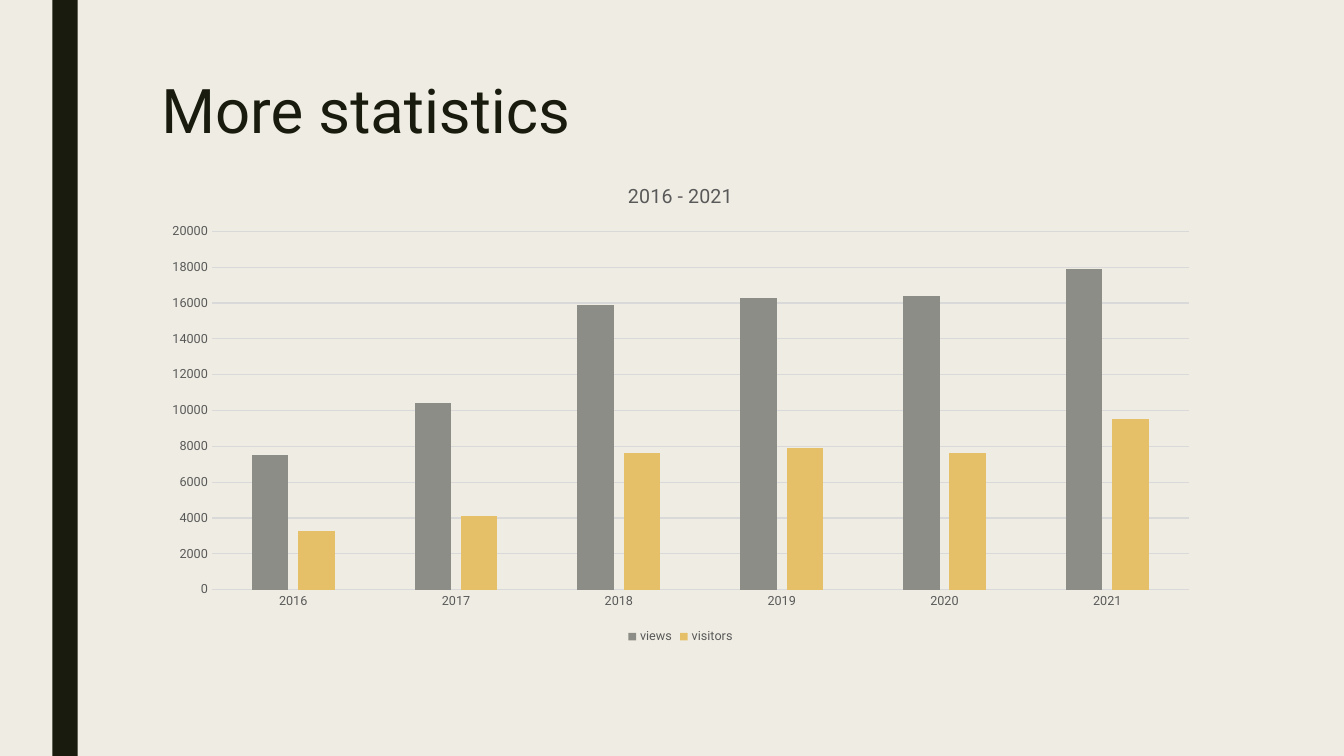
"""Build the statistics slide with a clustered column chart of views and visitors."""
import pptx
import pptx.chart.data
import pptx.dml.color
import pptx.enum.chart
import pptx.enum.shapes
import pptx.enum.text
import pptx.util
from pptx.util import Inches

TITLE = "More statistics"
CHART_TITLE = "2016 - 2021"
YEARS = ["2016", "2017", "2018", "2019", "2020", "2021"]
SERIES = {
    "views": (7500, 10400, 15900, 16300, 16400, 17900),
    "visitors": (3300, 4100, 7600, 7900, 7600, 9500),
}
COLORS = {
    "background": "EFEDE3",
    "dark": "191B0E",
    "label": "595959",
    "line": "D9D9D9",
    "views": "8C8D86",
    "visitors": "E6C069",
}
FONT = "Roboto"
LEFT, WIDTH = 1.5, 10.5


def color(name):
    return pptx.dml.color.RGBColor.from_string(COLORS[name])


def paint(fill, name):
    fill.solid()
    fill.fore_color.rgb = color(name)


def style_font(font, size, name):
    font.name = FONT
    font.size = pptx.util.Pt(size)
    font.bold = False
    font.color.rgb = color(name)


def style_line(line):
    line.color.rgb = color("line")
    line.width = pptx.util.Pt(0.75)


def add_side_bar(slide, height):
    bar = slide.shapes.add_shape(
        pptx.enum.shapes.MSO_SHAPE.RECTANGLE, Inches(0.52), 0, Inches(0.25), height)
    bar.shadow.inherit = False
    paint(bar.fill, "dark")
    bar.line.fill.background()


def format_title(title):
    title.left, title.top = Inches(LEFT), Inches(0.75)
    title.width, title.height = Inches(WIDTH), Inches(1.62)
    frame = title.text_frame
    frame.text = TITLE
    frame.word_wrap = True
    frame.auto_size = pptx.enum.text.MSO_AUTO_SIZE.NONE
    frame.vertical_anchor = pptx.enum.text.MSO_ANCHOR.TOP
    para = frame.paragraphs[0]
    para.alignment = pptx.enum.text.PP_ALIGN.LEFT
    para.line_spacing = 0.89
    style_font(para.runs[0].font, 44, "dark")


def add_statistics_chart(slide):
    data = pptx.chart.data.CategoryChartData()
    data.categories = YEARS
    for name, values in SERIES.items():
        data.add_series(name, values)
    chart = slide.shapes.add_chart(
        pptx.enum.chart.XL_CHART_TYPE.COLUMN_CLUSTERED,
        Inches(LEFT), Inches(1.62), Inches(WIDTH), Inches(4.81), data).chart
    style_font(chart.font, 10, "label")

    chart.has_title = True
    heading = chart.chart_title
    heading.include_in_layout = False
    heading.text_frame.text = CHART_TITLE
    style_font(heading.text_frame.paragraphs[0].runs[0].font, 14, "label")

    chart.has_legend = True
    chart.legend.position = pptx.enum.chart.XL_LEGEND_POSITION.BOTTOM
    chart.legend.include_in_layout = False
    style_font(chart.legend.font, 9, "label")

    for axis in (chart.category_axis, chart.value_axis):
        axis.major_tick_mark = pptx.enum.chart.XL_TICK_MARK.NONE
        axis.minor_tick_mark = pptx.enum.chart.XL_TICK_MARK.NONE
        style_font(axis.tick_labels.font, 9, "label")
    style_line(chart.category_axis.format.line)
    scale = chart.value_axis
    scale.minimum_scale, scale.maximum_scale, scale.major_unit = 0, 20000, 2000
    scale.format.line.fill.background()
    style_line(scale.major_gridlines.format.line)

    plot = chart.plots[0]
    plot.gap_width = 219
    plot.overlap = -27
    plot.vary_by_categories = False
    for series in plot.series:
        paint(series.format.fill, series.name)


def main():
    deck = pptx.Presentation()
    deck.slide_width, deck.slide_height = Inches(13.33), Inches(7.5)
    slide = deck.slides.add_slide(deck.slide_layouts.get_by_name("Title Only"))
    paint(slide.background.fill, "background")
    add_side_bar(slide, deck.slide_height)
    format_title(slide.shapes.title)
    add_statistics_chart(slide)
    deck.save("out.pptx")


if __name__ == "__main__":
    main()
